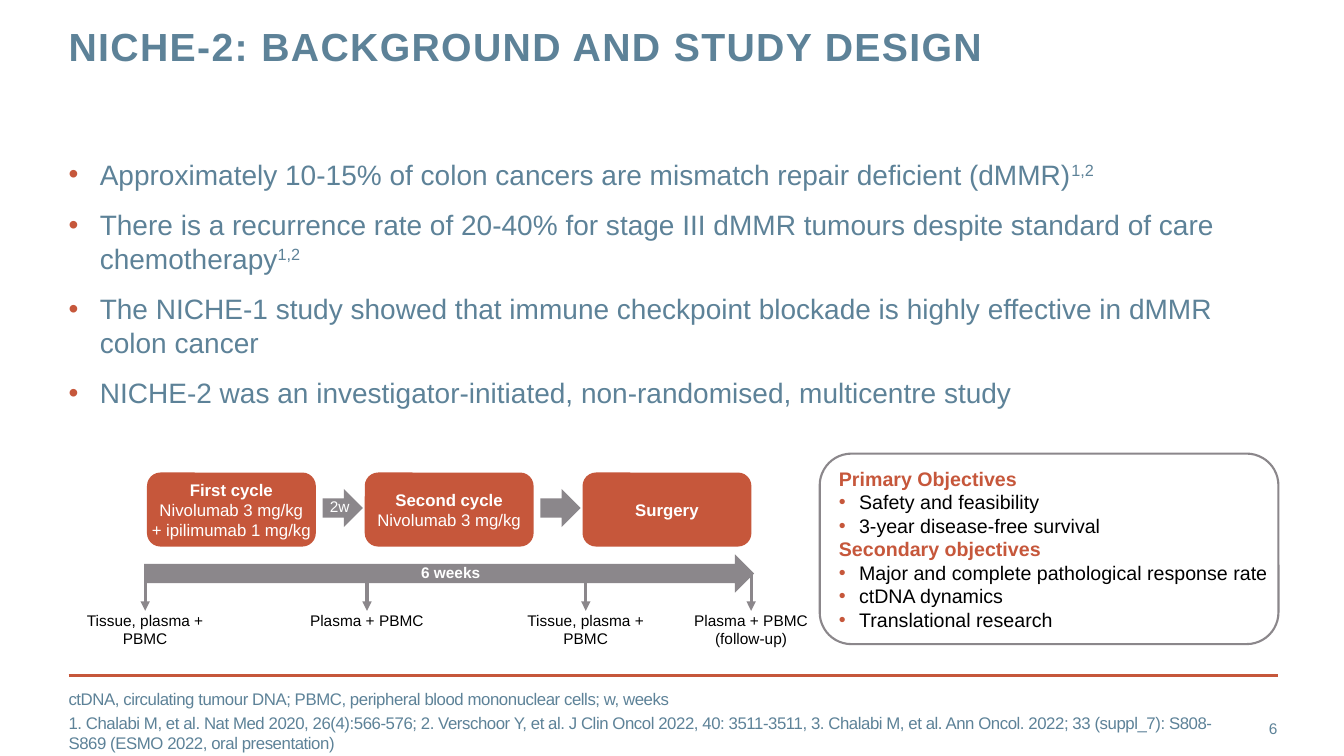
from dataclasses import dataclass

from lxml.etree import SubElement
from pptx import Presentation
from pptx.dml.color import RGBColor
from pptx.enum.shapes import MSO_CONNECTOR, MSO_SHAPE
from pptx.enum.text import MSO_ANCHOR as Anchor, MSO_AUTO_SIZE as AutoSize, PP_ALIGN as Align
from pptx.oxml.ns import qn
from pptx.util import Inches, Pt

BLUE = RGBColor(0x5D, 0x82, 0x98)
RUST = RGBColor(0xC6, 0x57, 0x3B)
GRAY = RGBColor(0x8B, 0x87, 0x8B)
BLACK = RGBColor(0, 0, 0)
WHITE = RGBColor(0xFF, 0xFF, 0xFF)


@dataclass
class Style:
    size: float
    color: RGBColor
    bold: bool = False
    tracking: int = 0  # hundredths of a point


@dataclass
class Cycle:
    name: str
    dose: str = ""


@dataclass
class Sample:
    x: float
    label: str
    top: float = 5.75


CYCLES = [
    Cycle("First cycle", "\nNivolumab 3 mg/kg\n+ ipilimumab 1 mg/kg"),
    Cycle("Second cycle", "\nNivolumab 3 mg/kg"),
    Cycle("Surgery"),
]
SAMPLES = [
    Sample(1.44, "Tissue, plasma +\nPBMC"),
    Sample(3.64, "Plasma + PBMC"),
    Sample(5.81, "Tissue, plasma +\nPBMC"),
    Sample(7.45, "Plasma + PBMC\n(follow-up)", 5.69),
]
BACKGROUND = [
    ("Approximately 10-15% of colon cancers are mismatch repair deficient (dMMR)", "1,2"),
    ("There is a recurrence rate of 20-40% for stage III dMMR tumours despite "
     "standard of care chemotherapy", "1,2"),
    ("The NICHE-1 study showed that immune checkpoint blockade is highly effective "
     "in dMMR colon cancer", ""),
    ("NICHE-2 was an investigator-initiated, non-randomised, multicentre study", ""),
]
OBJECTIVES = {
    "Primary Objectives": ["Safety and feasibility", "3-year disease-free survival"],
    "Secondary objectives": ["Major and complete pathological response rate",
                             "ctDNA dynamics", "Translational research"],
}
FOOTNOTES = [
    "ctDNA, circulating tumour DNA; PBMC, peripheral blood mononuclear cells; w, weeks",
    "1. Chalabi M, et al. Nat Med 2020, 26(4):566-576; 2. Verschoor Y, et al. "
    "J Clin Oncol 2022, 40: 3511-3511, 3. Chalabi M, et al. Ann Oncol. 2022; "
    "33 (suppl_7): S808-S869 (ESMO 2022, oral presentation)",
]


def place(shape, left: float, top: float, width: float, height: float) -> None:
    box = {"left": left, "top": top, "width": width, "height": height}
    for name, value in box.items():
        setattr(shape, name, Inches(value))


def set_frame(shape, anchor=Anchor.TOP, insets=(0, 0, 0, 0), wrap: bool = True):
    frame = shape.text_frame
    left, top, right, bottom = map(Inches, insets)
    values = {"auto_size": AutoSize.NONE, "word_wrap": wrap, "vertical_anchor": anchor,
              "margin_left": left, "margin_top": top,
              "margin_right": right, "margin_bottom": bottom}
    for name, value in values.items():
        setattr(frame, name, value)
    return frame


def new_paragraph(frame, align=Align.LEFT, before: float = 0, indent: float = 0):
    """Start a paragraph; a positive indent gives it a hanging bullet."""
    first = not frame.paragraphs[0].runs
    paragraph = frame.paragraphs[0] if first else frame.add_paragraph()
    properties = paragraph._p.get_or_add_pPr()
    properties.set("marL", str(Inches(indent)))
    properties.set("indent", str(-Inches(indent)))
    if indent:
        color = SubElement(properties, qn("a:buClr"))
        SubElement(color, qn("a:srgbClr"), val=str(RUST))
        SubElement(properties, qn("a:buFont"), typeface="Arial")
        SubElement(properties, qn("a:buChar"), char="•")
    else:
        SubElement(properties, qn("a:buNone"))
    values = {"alignment": align, "space_before": Pt(0 if first else before), "space_after": Pt(0)}
    for name, value in values.items():
        setattr(paragraph, name, value)
    return paragraph


def write(paragraph, text: str, style: Style, superscript: bool = False) -> None:
    for number, line in enumerate(text.split("\n")):
        if number:
            paragraph.add_line_break()
        if not line:
            continue
        run = paragraph.add_run()
        run.text = line
        values = {"name": "Arial", "size": Pt(style.size), "bold": style.bold}
        for name, value in values.items():
            setattr(run.font, name, value)
        run.font.color.rgb = style.color
        if style.tracking:
            run._r.get_or_add_rPr().set("spc", str(style.tracking))
        if superscript:
            run._r.get_or_add_rPr().set("baseline", "30000")


def add_label(slide, text: str, style: Style, left: float, top: float, width: float,
              height: float, align=Align.CENTER, anchor=Anchor.TOP):
    label = slide.shapes.add_textbox(*map(Inches, (left, top, width, height)))
    write(new_paragraph(set_frame(label, anchor), align), text, style)
    return label


def add_block(slide, preset, fill: RGBColor, left: float, top: float, width: float,
              height: float, line: RGBColor = None, weight: float = 0):
    shape = slide.shapes.add_shape(preset, *map(Inches, (left, top, width, height)))
    shape.shadow.inherit = False
    shape.fill.solid()
    shape.fill.fore_color.rgb = fill
    if line is None:
        shape.line.fill.background()
    else:
        shape.line.color.rgb = line
        shape.line.width = Pt(weight)
    return shape


def add_line(slide, x1: float, y1: float, x2: float, y2: float, color: RGBColor,
             weight: float, arrow: bool = False):
    connector = slide.shapes.add_connector(
        MSO_CONNECTOR.STRAIGHT, *map(Inches, (x1, y1, x2, y2)))
    connector.line.color.rgb = color
    connector.line.width = Pt(weight)
    if arrow:
        SubElement(connector.line._get_or_add_ln(), qn("a:tailEnd"), type="triangle")
    SubElement(connector._element.spPr, qn("a:effectLst"))
    return connector


def add_texts(slide) -> None:
    title, body, notes = slide.placeholders
    place(title, 0.68, 0.27, 9.56, 0.88)
    paragraph = new_paragraph(set_frame(title))
    paragraph.line_spacing = Pt(30)
    write(paragraph, "NICHE-2: BACKGROUND AND STUDY DESIGN", Style(28, BLUE, True, 100))

    place(body, 0.68, 1.56, 11.99, 0.88)
    frame = set_frame(body)
    for text, reference in BACKGROUND:
        paragraph = new_paragraph(frame, before=12, indent=0.31)
        write(paragraph, text, Style(20, BLUE))
        write(paragraph, reference, Style(20, BLUE), superscript=True)

    place(notes, 0.68, 6.95, 11.56, 0.4)
    frame = set_frame(notes, Anchor.MIDDLE)
    for text in FOOTNOTES:
        write(new_paragraph(frame, before=3), text, Style(12, BLUE, tracking=-30))


def add_objectives(slide) -> None:
    panel = add_block(slide, MSO_SHAPE.ROUNDED_RECTANGLE, WHITE, 8.13, 4.5, 4.55, 1.89, GRAY, 1.5)
    frame = set_frame(panel, Anchor.MIDDLE, (0.1, 0.05, 0, 0.05))
    for heading, goals in OBJECTIVES.items():
        write(new_paragraph(frame), heading, Style(14, RUST, True))
        for goal in goals:
            write(new_paragraph(frame, indent=0.2), goal, Style(14, BLACK))


def add_study_design(slide) -> None:
    # Treatment boxes with arrows between them
    for number, cycle in enumerate(CYCLES):
        left = 1.47 + 2.16 * number
        box = add_block(slide, MSO_SHAPE.ROUNDED_RECTANGLE, RUST, left, 4.7, 1.65, 0.71, RUST, 1.75)
        box.adjustments[0] = 0.17
        frame = set_frame(box, Anchor.MIDDLE, (0, 0.05, 0, 0.05), wrap=False)
        paragraph = new_paragraph(frame, Align.CENTER)
        write(paragraph, cycle.name, Style(12, WHITE, True))
        write(paragraph, cycle.dose, Style(12, WHITE))
        if number < len(CYCLES) - 1:
            add_block(slide, MSO_SHAPE.RIGHT_ARROW, GRAY, left + 1.73, 4.85, 0.4, 0.38)
    add_label(slide, "2w", Style(11, WHITE), 3.18, 4.93, 0.38, 0.19)

    # Timeline with sampling points
    add_block(slide, MSO_SHAPE.RIGHT_ARROW, GRAY, 1.43, 5.5, 6.05, 0.38)
    add_label(slide, "6 weeks", Style(11, WHITE, True), 3.84, 5.59, 1.26, 0.19)
    for sample in SAMPLES:
        height = 0.37 if "\n" in sample.label else 0.19
        label = add_label(slide, sample.label, Style(11, BLACK), sample.x - 0.6, 6.06, 1.2, height)
        place(label, sample.x - 0.63, 6.06, 1.26, height)
        tick = add_line(slide, sample.x, sample.top, sample.x, 6.06, GRAY, 2.25, arrow=True)
        tick.end_connect(label, 0)


def main() -> None:
    presentation = Presentation()
    presentation.slide_width = Inches(13.33)
    presentation.slide_height = Inches(7.5)
    slide = presentation.slides.add_slide(presentation.slide_layouts.get_by_name("Two Content"))
    add_line(slide, 0.68, 6.7, 12.68, 6.7, RUST, 2)
    add_texts(slide)
    add_objectives(slide)
    add_study_design(slide)
    add_label(slide, "6", Style(11, BLUE), 11.81, 7.03, 0.86, 0.4, Align.RIGHT, Anchor.MIDDLE)
    presentation.save("out.pptx")


if __name__ == "__main__":
    main()
